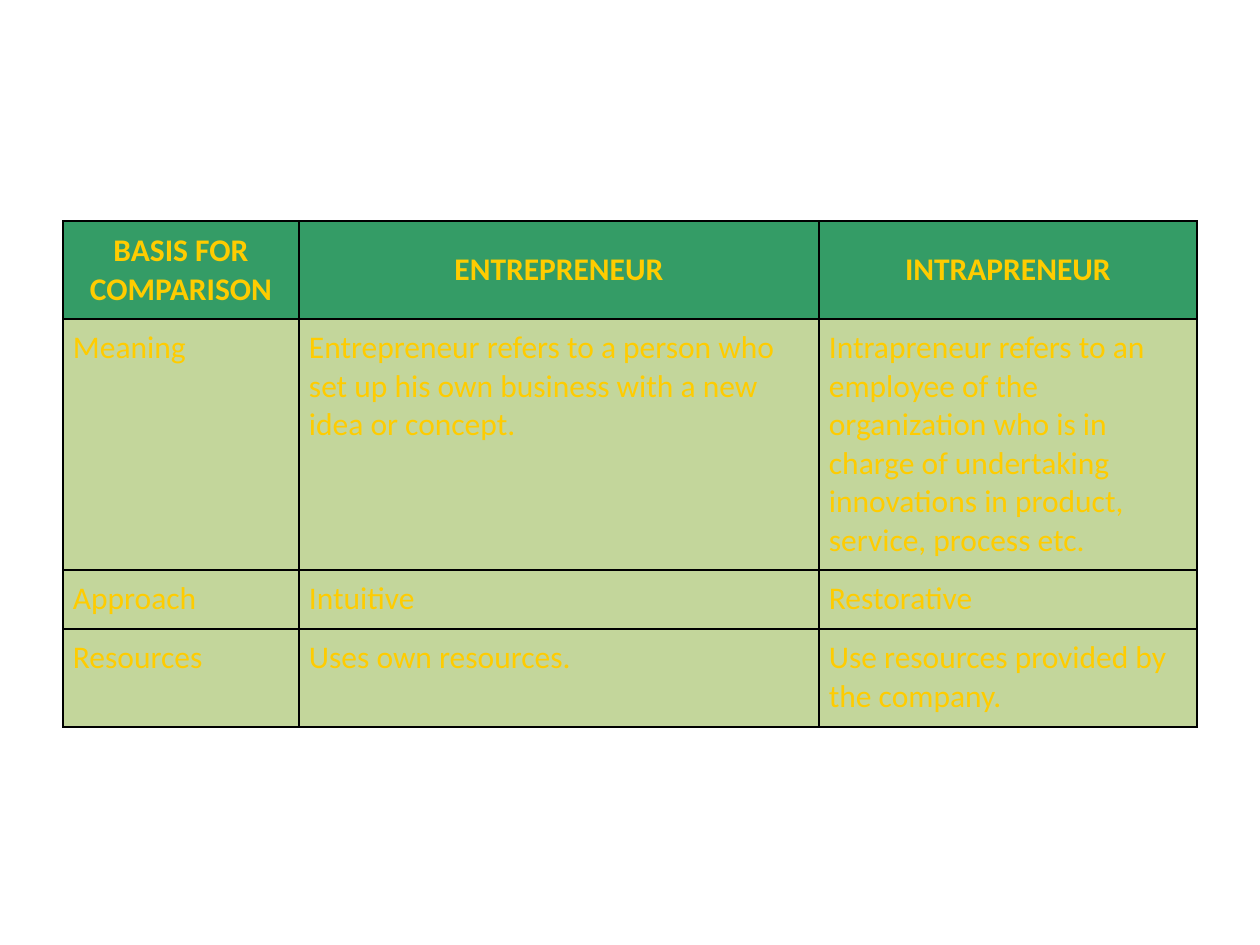
from dataclasses import dataclass

from lxml.etree import SubElement
from pptx import Presentation
from pptx.dml.color import RGBColor as RGB
from pptx.enum.text import MSO_ANCHOR as Anchor, PP_ALIGN as Align
from pptx.oxml import parse_xml
from pptx.oxml.ns import nsdecls, qn
from pptx.util import Pt

HEADINGS = ("BASIS FOR COMPARISON", "ENTREPRENEUR", "INTRAPRENEUR")
COMPARISONS = [
    ("Meaning",
     "Entrepreneur refers to a person who set up his own business with a new "
     "idea or concept.",
     "Intrapreneur refers to an employee of the organization who is in charge "
     "of undertaking innovations in product, service, process etc."),
    ("Approach", "Intuitive", "Restorative"),
    ("Resources", "Uses own resources.", "Use resources provided by the company."),
]

PX = 914400 // 126
SLIDE_SIZE = (1260, 945)
TABLE_LEFT, TABLE_TOP = 63, 221
COLUMN_WIDTHS = (236, 520, 378)
ROW_HEIGHTS = (98, 251, 59, 98)
CELL_MARGIN = 10


@dataclass(frozen=True)
class Theme:
    font: str = "Calibri"
    size: int = 18
    text: str = "FFCC00"
    heading_fill: str = "349C66"
    heading_outline: str = "FFC000"
    body_fill: str = "C3D69B"
    body_outline: str = "7C1E71"
    outline_width: float = 0.75
    border: str = "000000"
    border_width: int = 1


THEME = Theme()


def line_xml(tag, color, width):
    return parse_xml(
        f'<a:{tag} {nsdecls("a")} w="{Pt(width)}"><a:solidFill>'
        f'<a:srgbClr val="{color}"/></a:solidFill></a:{tag}>')


def add_borders(cell):
    properties = cell._tc.get_or_add_tcPr()
    for position, side in enumerate(("lnL", "lnR", "lnT", "lnB")):
        properties.insert(position, line_xml(side, THEME.border, THEME.border_width))


def fill_cell(cell, wording, is_heading):
    cell.margin_left = cell.margin_right = CELL_MARGIN * PX
    cell.margin_top = cell.margin_bottom = CELL_MARGIN * PX
    cell.vertical_anchor = Anchor.MIDDLE if is_heading else Anchor.TOP
    cell.fill.solid()
    cell.fill.fore_color.rgb = RGB.from_string(
        THEME.heading_fill if is_heading else THEME.body_fill)
    add_borders(cell)

    paragraph = cell.text_frame.paragraphs[0]
    paragraph.alignment = Align.CENTER if is_heading else Align.LEFT
    run = paragraph.add_run()
    run.text = wording
    run.font.name = THEME.font
    run.font.size = Pt(THEME.size)
    run.font.bold = is_heading
    run.font.color.rgb = RGB.from_string(THEME.text)
    outline = THEME.heading_outline if is_heading else THEME.body_outline
    run._r.get_or_add_rPr().insert(0, line_xml("ln", outline, THEME.outline_width))


def add_comparison(slide):
    rows = [HEADINGS, *COMPARISONS]
    table = slide.shapes.add_table(
        len(rows), len(HEADINGS), TABLE_LEFT * PX, TABLE_TOP * PX,
        sum(COLUMN_WIDTHS) * PX, sum(ROW_HEIGHTS) * PX).table
    table.horz_banding = False
    for column, width in zip(table.columns, COLUMN_WIDTHS):
        column.width = width * PX
    for row, height in zip(table.rows, ROW_HEIGHTS):
        row.height = height * PX
    for row_number, wordings in enumerate(rows):
        for column_number, wording in enumerate(wordings):
            fill_cell(table.cell(row_number, column_number), wording, row_number == 0)


def main():
    deck = Presentation()
    deck.slide_width, deck.slide_height = (side * PX for side in SLIDE_SIZE)
    blank_layout = deck.slide_layouts[6]
    add_comparison(deck.slides.add_slide(blank_layout))
    deck.save("out.pptx")


if __name__ == "__main__":
    main()
